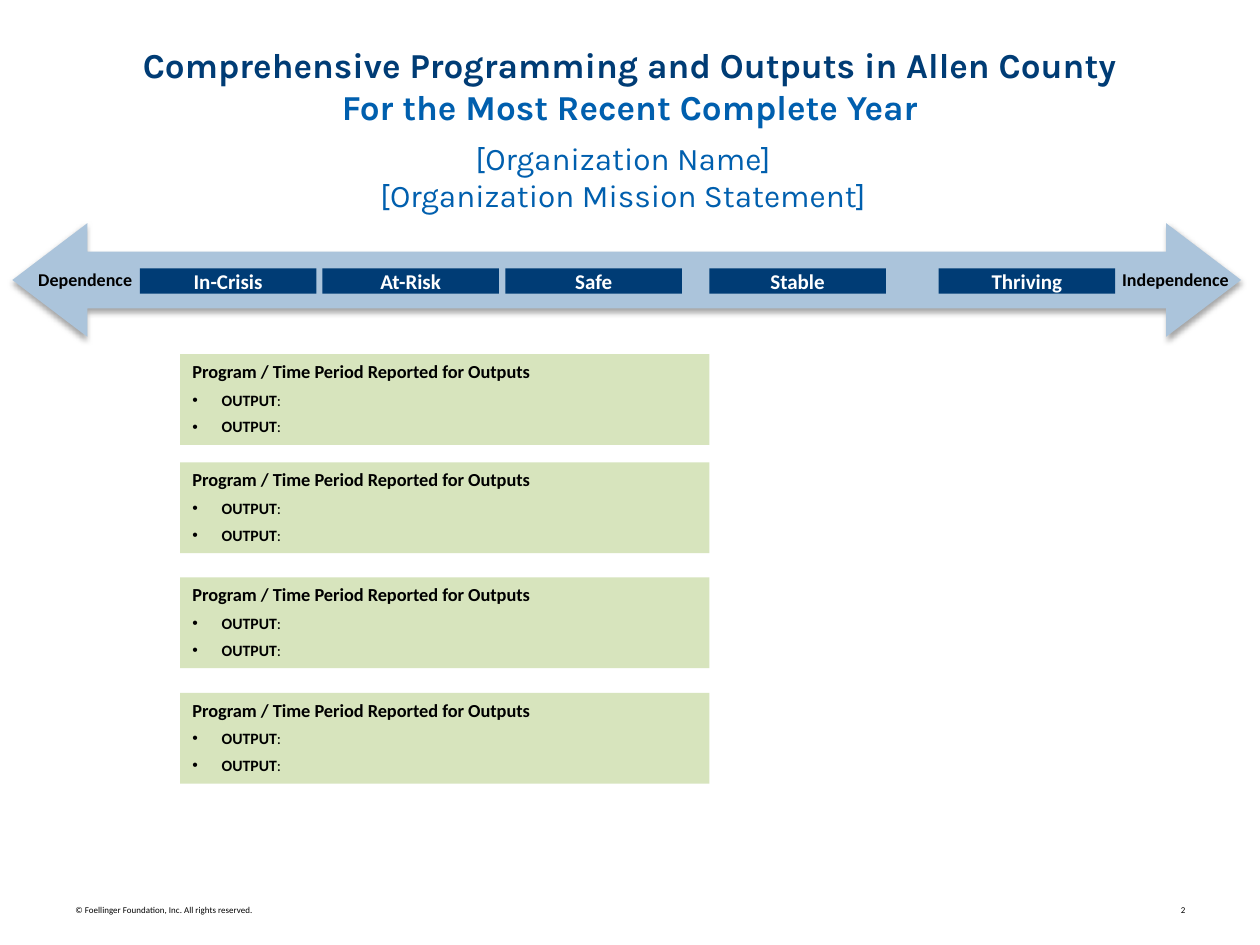
from lxml import etree
from pptx import Presentation
from pptx import util as u
from pptx.dml import color
from pptx.enum import shapes, text
from pptx.oxml import ns

NAVY, BLUE, PALE, GREEN = "003C75", "005FAE", "ABC4DB", "D7E4BD"
BLACK, WHITE = "000000", "FFFFFF"
CENTER = text.PP_ALIGN.CENTER


def rgb(value):
    """Return a colour from a hex string."""
    return color.RGBColor.from_string(value)


def add_xml(parent, tag, **attrs):
    """Append a DrawingML element and return it."""
    return etree.SubElement(parent, ns.qn(tag), attrs)


def add_block(slide, kind, box, fill):
    """Add a filled shape without outline or shadow."""
    sp = slide.shapes.add_shape(kind, *map(u.Cm, box))
    sp.shadow.inherit = False
    sp.fill.solid()
    sp.fill.fore_color.rgb = rgb(fill)
    sp.line.fill.background()
    return sp


def add_run(p, content, size, hue, bold=True, font="Calibri"):
    """Append a formatted run to a paragraph."""
    r = p.add_run()
    r.text = content
    r.font.name, r.font.size, r.font.bold = font, u.Pt(size), bold
    r.font.color.rgb = rgb(hue)


def add_text(slide, box, anchor=text.MSO_ANCHOR.TOP):
    """Add a wrapping text box and return its text frame."""
    tf = slide.shapes.add_textbox(*map(u.Cm, box)).text_frame
    tf.word_wrap = True
    tf.vertical_anchor = anchor
    return tf


def add_title(slide, box):
    """Place the two-colour title over its box."""
    p = add_text(slide, box, text.MSO_ANCHOR.MIDDLE).paragraphs[0]
    p.alignment = CENTER
    add_run(p, "Comprehensive Programming and Outputs in Allen County", 20, NAVY, font="Karla")
    p.add_line_break()
    add_run(p, "For the Most Recent Complete Year", 20, BLUE, font="Karla")


def add_organization(slide, box):
    """Place the organization name and mission lines."""
    tf = add_text(slide, box)
    for i, line in enumerate(("[Organization Name]", "[Organization Mission Statement]")):
        p = tf.add_paragraph() if i else tf.paragraphs[0]
        p.alignment = CENTER
        add_run(p, line, 18, BLUE, False, "Karla")


def add_arrow(slide, box):
    """Place the double-headed arrow with its soft shadow."""
    sp = add_block(slide, shapes.MSO_SHAPE.LEFT_RIGHT_ARROW, box, PALE)
    sp.adjustments[0], sp.adjustments[1] = 0.5, 0.66
    effects = sp._element.spPr.find(ns.qn("a:effectLst"))
    shadow = add_xml(effects, "a:outerShdw", blurRad=str(u.Pt(3.1)), dist=str(u.Pt(1.8)),
                     dir="5400000", rotWithShape="0")
    add_xml(add_xml(shadow, "a:srgbClr", val=BLACK), "a:alpha", val="35000")


def add_continuum(slide, box):
    """Place the arrow, its five stages and its two end labels."""
    x, y, w, h = box
    add_arrow(slide, box)
    stages = {"In-Crisis": 2.57, "At-Risk": 6.25, "Safe": 9.94, "Stable": 14.05, "Thriving": 18.67}
    for name, dx in stages.items():
        sp = add_block(slide, shapes.MSO_SHAPE.RECTANGLE, (x + dx, y + 0.91, 3.56, 0.51), NAVY)
        tf = sp.text_frame
        tf.margin_top = tf.margin_bottom = 0
        tf.vertical_anchor = text.MSO_ANCHOR.MIDDLE
        tf.paragraphs[0].alignment = CENTER
        add_run(tf.paragraphs[0], name, 12, WHITE)
    for name, dx, width in (("Dependence", 0.16, 2.62), ("Independence", w - 2.77, 2.9)):
        p = add_text(slide, (x + dx, y + 0.78, width, 0.71)).paragraphs[0]
        p.alignment = CENTER
        add_run(p, name, 10.3, BLACK)


def add_program(slide, box):
    """Place one program panel with its heading and outputs."""
    tf = add_block(slide, shapes.MSO_SHAPE.RECTANGLE, box, GREEN).text_frame
    tf.word_wrap = True
    tf.vertical_anchor = text.MSO_ANCHOR.TOP
    for i in range(3):
        p = tf.add_paragraph() if i else tf.paragraphs[0]
        p.alignment = text.PP_ALIGN.LEFT
        p.space_after = u.Pt(4.5)
        pPr = p._p.get_or_add_pPr()
        pPr.set("marL", str(u.Cm(0.59)))
        pPr.set("indent", str(u.Cm(-0.59)))
        if i:
            add_xml(pPr, "a:buFont", typeface="Arial")
            add_xml(pPr, "a:buChar", char="•")
            add_run(p, "OUTPUT", 9, BLACK)
            add_run(p, ":", 9, BLACK, False)
        else:
            add_run(p, "Program / Time Period Reported for Outputs", 10.5, BLACK)


def add_footer(slide, box):
    """Place the copyright line and the right-tabbed page number."""
    p = add_text(slide, box, text.MSO_ANCHOR.MIDDLE).paragraphs[0]
    tabs = add_xml(p._p.get_or_add_pPr(), "a:tabLst")
    add_xml(tabs, "a:tab", pos=str(u.Cm(22.38)), algn="r")
    add_run(p, "© Foellinger Foundation, Inc. All rights reserved.\t2", 5.1, BLACK, False)


def main():
    """Build and save the slide."""
    prs = Presentation()
    prs.slide_width, prs.slide_height = u.Cm(25.4), u.Cm(19.05)
    s = prs.slides.add_slide(prs.slide_layouts[6])
    for top in (7.14, 9.32, 11.64, 13.97):
        add_program(s, (3.63, top, 10.67, 1.83))
    add_title(s, (0, 0.13, 25.4, 3.18))
    add_organization(s, (6.17, 2.67, 12.78, 1.8))
    add_continuum(s, (0.25, 4.5, 24.77, 2.29))
    add_footer(s, (1.27, 17.83, 22.96, 1.02))
    prs.save("out.pptx")


if __name__ == "__main__":
    main()
